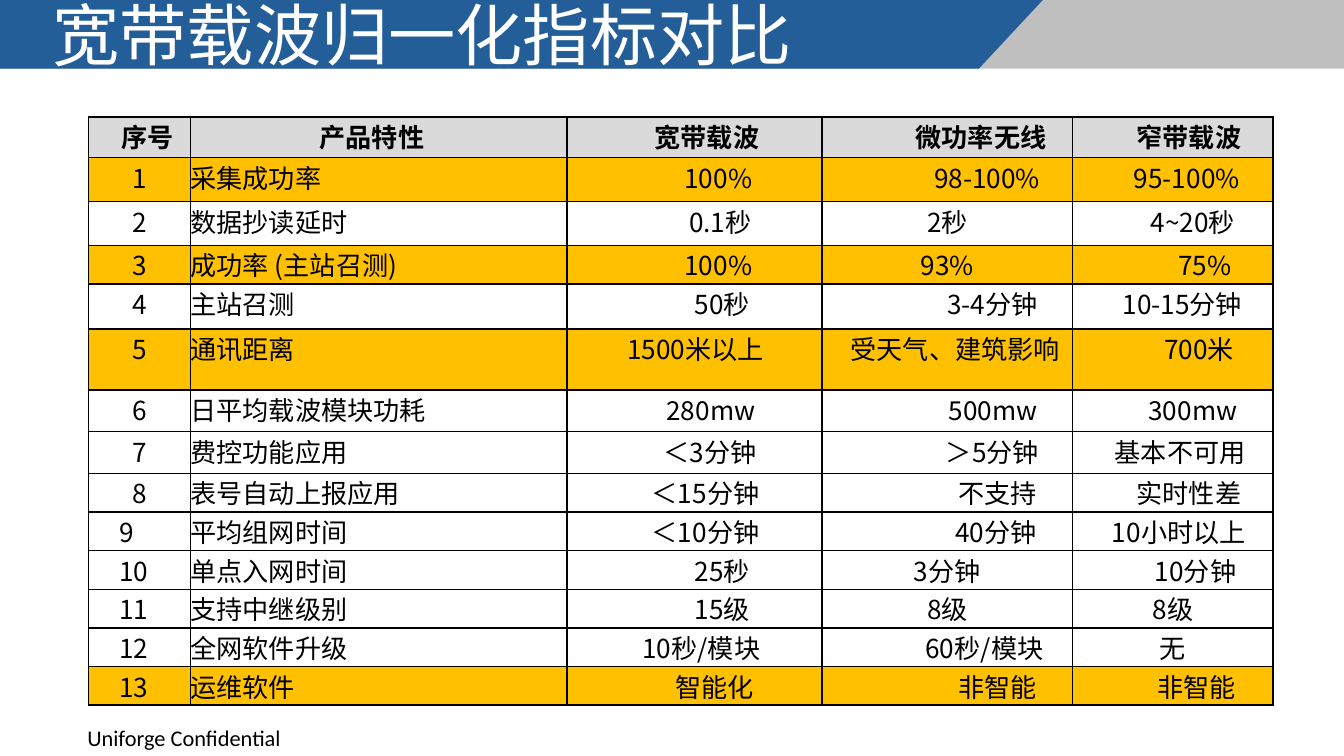
from lxml import etree
from pptx import Presentation, util as u
from pptx.dml.color import RGBColor
from pptx.enum import shapes, text
from pptx.oxml.ns import qn

COLORS = {"blue": "235E99", "grey": "BFBFBF", "header": "DADADA",
          "highlight": "FFC000", "black": "000000", "white": "FFFFFF"}
FONT = "Noto Sans CJK SC"


def format_runs(paragraph, size, color, name=FONT, bold=False):
    for run in paragraph.runs:
        run.font.size = u.Pt(size)
        run.font.name = name
        run.font.bold = bold
        run.font.color.rgb = RGBColor.from_string(COLORS[color])
        # The East Asian font must directly follow a:latin
        east_asian = etree.SubElement(run.font._element, qn("a:ea"), typeface=name)
        run.font._element.find(qn("a:latin")).addnext(east_asian)


def add_borders(cell):
    properties = cell._tc.get_or_add_tcPr()
    for side in ("lnL", "lnR", "lnT", "lnB"):
        line = etree.SubElement(properties, qn(f"a:{side}"), w=str(u.Pt(1)))
        fill = etree.SubElement(line, qn("a:solidFill"))
        etree.SubElement(fill, qn("a:srgbClr"), val=COLORS["black"])


presentation = Presentation()
presentation.slide_width = u.Cm(25.4)
presentation.slide_height = u.Cm(14.29)
slide = presentation.slides.add_slide(presentation.slide_layouts[5])

# Banner: grey strip, blue bar and its slanted end
banner = [
    (shapes.MSO_SHAPE.RECTANGLE, 0, 25.4, "grey"),
    (shapes.MSO_SHAPE.RECTANGLE, 0, 18.5, "blue"),
    (shapes.MSO_SHAPE.RIGHT_TRIANGLE, 18.5, 1.21, "blue"),
]
for kind, left, width, color in banner:
    shape = slide.shapes.add_shape(kind, u.Cm(left), 0, u.Cm(width), u.Cm(1.3))
    shape.shadow.inherit = False
    shape.fill.solid()
    shape.fill.fore_color.rgb = RGBColor.from_string(COLORS[color])
    shape.line.fill.background()
shape._element.spPr.xfrm.set("flipV", "1")

# Title, moved in front of the banner
title = slide.shapes.title
title.left, title.top, title.width, title.height = u.Cm(0.74), 0, u.Cm(23.29), u.Cm(1.27)
slide.shapes._spTree.append(title._element)
title.text_frame.text = "宽带载波归一化指标对比"
title.text_frame.auto_size = text.MSO_AUTO_SIZE.NONE
title.text_frame.vertical_anchor = text.MSO_ANCHOR.MIDDLE
title.text_frame.paragraphs[0].alignment = text.PP_ALIGN.LEFT
format_runs(title.text_frame.paragraphs[0], 36, "white")

# Footer
footer = slide.shapes.add_textbox(u.Cm(1.4), u.Cm(13.56), u.Cm(11.4), u.Cm(0.76))
footer.text_frame.word_wrap = True
footer.text_frame.text = "Uniforge Confidential"
format_runs(footer.text_frame.paragraphs[0], 12, "black", "Calibri")

# Comparison table: row height, cell texts, left indents of the cells (cm)
rows = [
    (0.77, ["序号", "产品特性", "宽带载波", "微功率无线", "窄带载波"], [0.3, 2.44, 0.46, 1.27, 0.61]),
    (0.83, ["1", "采集成功率", "100%", "98-100%", "95-100%"], [0, 0, 0.89, 1.5, 0.53]),
    (0.83, ["2", "数据抄读延时", "0.1秒", "2秒", "4~20秒"], [0, 0, 0.97, 0, 0.76]),
    (0.73, ["3", "成功率 (主站召测)", "100%", "93%", "75%"], [0, 0, 0.89, 0, 1.22]),
    (0.85, ["4", "主站召测", "50秒", "3-4分钟", "10-15分钟"], [0, 0, 1.04, 1.7, 0.36]),
    (1.15, ["5", "通讯距离", "1500米以上", "受天气、建筑影响", "700米"], [0, 0, 0.03, 0.3, 0.99]),
    (0.79, ["6", "日平均载波模块功耗", "280mw", "500mw", "300mw"], [0, 0, 0.61, 1.73, 0.76]),
    (0.79, ["7", "费控功能应用", "＜3分钟", "＞5分钟", "基本不可用"], [0, 0, 0.58, 1.7, 0.28]),
    (0.73, ["8", "表号自动上报应用", "＜15分钟", "不支持", "实时性差"], [0, 0, 0.41, 1.9, 0.61]),
    (0.73, ["9", "平均组网时间", "＜10分钟", "40分钟", "10小时以上"], [0.58, 0, 0.41, 1.83, 0.23]),
    (0.73, ["10", "单点入网时间", "25秒", "3分钟", "10分钟"], [0.58, 0, 1.04, 0, 0.86]),
    (0.73, ["11", "支持中继级别", "15级", "8级", "8级"], [0.58, 0, 1.04, 0, 0]),
    (0.73, ["12", "全网软件升级", "10秒/模块", "60秒/模块", "无"], [0.58, 0, 0.25, 1.4, 0]),
    (0.73, ["13", "运维软件", "智能化", "非智能", "非智能"], [0.58, 0, 0.76, 1.9, 0.91]),
]
column_widths = [1.93, 7.12, 4.82, 4.73, 3.79]
row_fills = {0: "header", 1: "highlight", 3: "highlight", 5: "highlight", 13: "highlight"}

table = slide.shapes.add_table(len(rows), len(column_widths), u.Cm(1.67), u.Cm(2.21),
                               u.Cm(sum(column_widths)), u.Cm(sum(row[0] for row in rows))).table
table.first_row = table.horz_banding = False
for column, width in zip(table.columns, column_widths):
    column.width = u.Cm(width)

for row_index, (height, labels, indents) in enumerate(rows):
    table.rows[row_index].height = u.Cm(height)
    for column_index, (label, indent) in enumerate(zip(labels, indents)):
        cell = table.cell(row_index, column_index)
        cell.margin_left = cell.margin_right = cell.margin_top = cell.margin_bottom = 0
        add_borders(cell)
        if row_index in row_fills:
            cell.fill.solid()
            cell.fill.fore_color.rgb = RGBColor.from_string(COLORS[row_fills[row_index]])
        else:
            cell.fill.background()
        cell.text_frame.text = label
        paragraph = cell.text_frame.paragraphs[0]
        # Features and the indented numbers from 9 on are left-aligned
        is_left = column_index == 1 or (column_index == 0 and row_index >= 9)
        paragraph.alignment = text.PP_ALIGN.LEFT if is_left else text.PP_ALIGN.CENTER
        paragraph._p.get_or_add_pPr().set("marL", str(u.Cm(indent)))
        format_runs(paragraph, 14, "black", bold=row_index == 0)

presentation.save("out.pptx")
